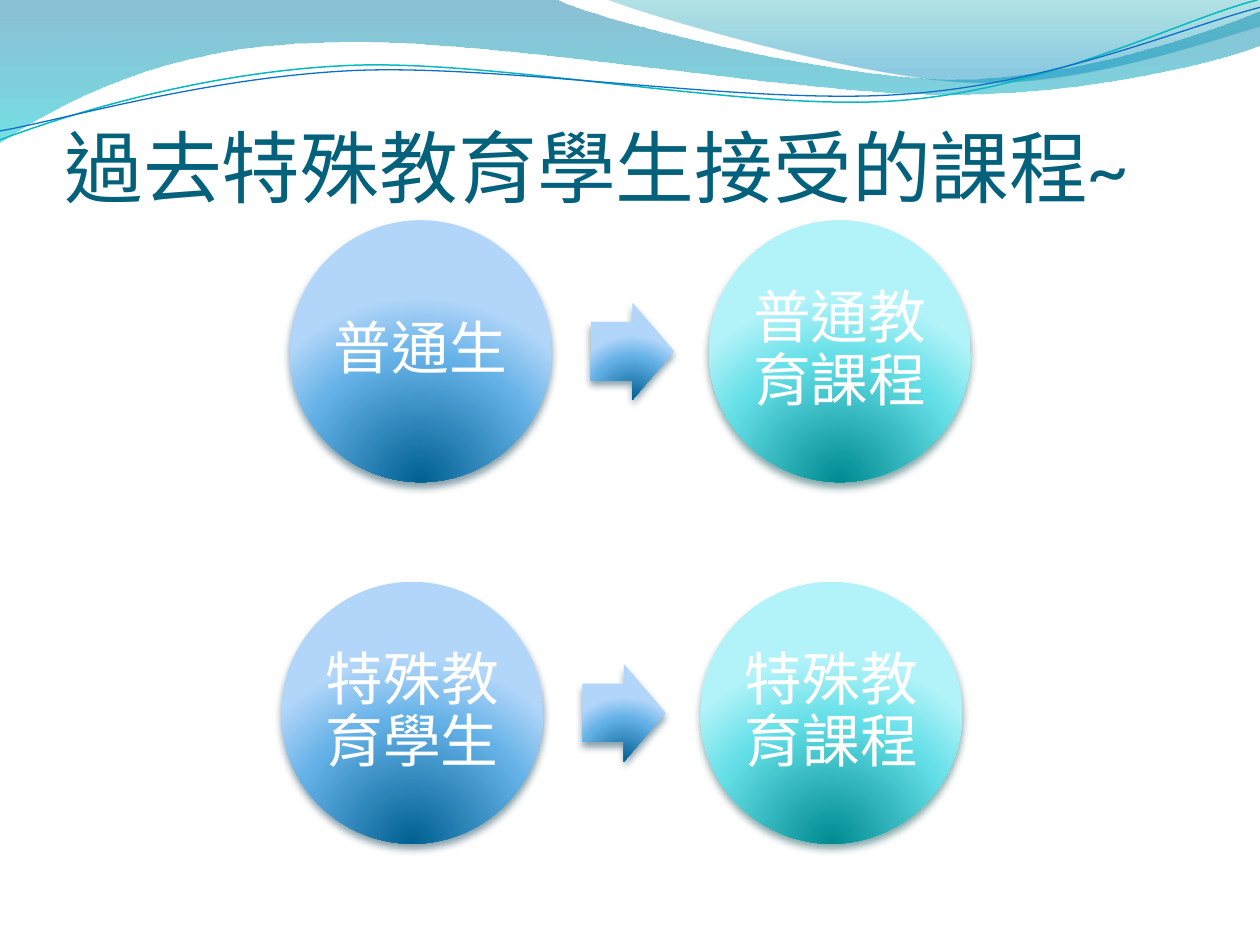
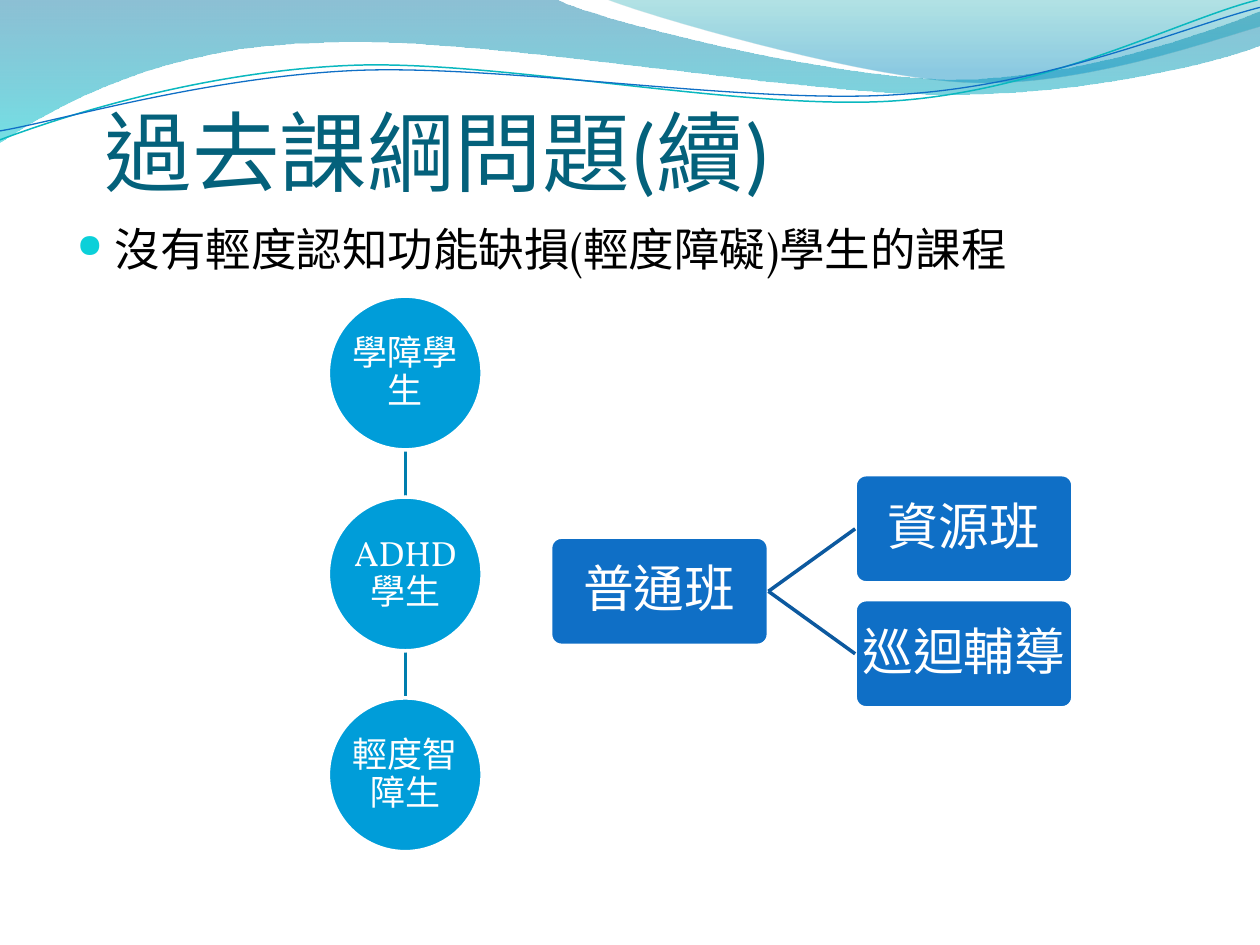
import pptx
import pptx.util
import pptx.dml.color
import pptx.enum.lang
import pptx.enum.shapes
import pptx.enum.text
import pptx.oxml
import pptx.oxml.ns

Cm = pptx.util.Cm
Pt = pptx.util.Pt
RGB = pptx.dml.color.RGBColor
KIND = pptx.enum.shapes.MSO_SHAPE
ALIGN = pptx.enum.text.PP_ALIGN
ANCHOR = pptx.enum.text.MSO_ANCHOR
qn = pptx.oxml.ns.qn

# Colours
WHITE = RGB(0xFF, 0xFF, 0xFF)
BLACK = RGB(0x00, 0x00, 0x00)
TITLE = RGB(0x04, 0x61, 0x7B)
BULLET = RGB(0x0B, 0xD0, 0xD9)
TEAL = RGB(0x0A, 0xB8, 0xBF)
BLUE = RGB(0x0F, 0x6F, 0xC6)
NAVY = RGB(0x0C, 0x59, 0x9F)
SKY = RGB(0x00, 0x9D, 0xD9)
STEEL = RGB(0x00, 0x7E, 0xAE)

# Gradients: (position, colour, opacity), then the shadow of a ball
DEEP = [(0, RGB(0x00, 0x74, 0xA1), 45), (100, RGB(0x00, 0xC6, 0xCF), 55)]
PALE = [(0, RGB(0x00, 0xA1, 0xA9), 30), (80, RGB(0x00, 0x8B, 0xBF), 45)]
COOL = [(0, RGB(0x00, 0x60, 0x91), 100), (68, RGB(0x64, 0xB1, 0xE7), 100),
        (100, RGB(0xB1, 0xD6, 0xF9), 100)]
AQUA = [(0, RGB(0x00, 0x8A, 0x91), 100), (68, RGB(0x64, 0xDF, 0xE7), 100),
        (100, RGB(0xB1, 0xF3, 0xF9), 100)]
COOL_DIM = RGB(0x00, 0x37, 0x4C)
AQUA_DIM = RGB(0x02, 0x4B, 0x4E)

HEAD, BODY = "Calibri", "Vollkorn"
DOWN = '<a:lin ang="5400000" scaled="0"/>'
GLOW = ('<a:path path="circle"><a:fillToRect l="50000" t="130000" '
        'r="50000" b="-30000"/></a:path>')

# Header waves in cm: a pair is a corner, six numbers are a curve
BAND = [(0, 0), (11.23, 0), (12.09, 0.43, 16.87, 1.6, 19.25, 1.6),
        (21.67, 1.6, 24.33, 0.66, 25.4, 0.23), (25.4, 0.91),
        (24.97, 1.12, 22.1, 1.93, 18.95, 1.9),
        (15.8, 1.9, 9.7, 0.71, 6.53, 0.86),
        (3.28, 0.91, 1.17, 2.11, 0, 2.87)]
VEIL = [(12.25, 0), (12.93, 0.28, 17.32, 1.57, 19.53, 1.65),
        (21.74, 1.75, 24.41, 0.81, 25.4, 0.53), (25.4, 0)]
UPPER = [(0, 2.82), (1.22, 2.36, 4.01, 1.45, 7.04, 1.32),
         (10.03, 1.19, 15.06, 2.26, 18.11, 2.03),
         (21.16, 1.8, 23.83, 0.38, 25.35, 0)]
LOWER = [(0, 2.64), (1.19, 2.44, 4.17, 1.55, 7.19, 1.42),
         (10.24, 1.3, 15.16, 2.13, 18.21, 1.9),
         (21.23, 1.7, 23.9, 0.53, 25.4, 0.15)]


def node(tag, inner="", **attrs):
    """Make one drawing element."""
    space = pptx.oxml.ns.nsdecls("a")
    pairs = " ".join(f'{key}="{val}"' for key, val in attrs.items())
    return pptx.oxml.parse_xml(f"<a:{tag} {space} {pairs}>{inner}</a:{tag}>")


def bend(shape, steps):
    """Turn each three lines that stand for a curve into that curve."""
    lines = iter(list(shape.element.iter(qn("a:lnTo"))))
    for step in steps[1:]:
        first = next(lines)
        if len(step) == 6:
            curve = node("cubicBezTo")
            first.addprevious(curve)
            for part in (first, next(lines), next(lines)):
                curve.append(part[0])
                part.getparent().remove(part)


def write(shape, text, size=20, font=BODY, color=WHITE, align=ALIGN.CENTER,
          anchor=ANCHOR.MIDDLE, inset=(0.13,) * 4, space=None):
    """Put one formatted paragraph in a shape and return it."""
    frame = shape.text_frame
    frame.word_wrap = True
    frame.vertical_anchor = anchor
    (frame.margin_left, frame.margin_top,
     frame.margin_right, frame.margin_bottom) = map(Cm, inset)
    para = frame.paragraphs[0]
    para.alignment = align
    para.line_spacing = space
    run = para.add_run()
    run.text = text
    run.font.size, run.font.name = Pt(size), font
    run.font.color.rgb = color
    run.font.language_id = pptx.enum.lang.MSO_LANGUAGE_ID.TRADITIONAL_CHINESE
    return para


class Deck:
    """Holds the shared style and the current slide."""

    def __init__(self):
        self.prs = pptx.Presentation()
        self.prs.slide_width, self.prs.slide_height = Cm(25.4), Cm(19.05)

    def page(self, title, left, top, size):
        self.slide = self.prs.slides.add_slide(self.prs.slide_layouts[6])
        self.shapes = self.slide.shapes
        self.wave(BAND, grad=DEEP)
        self.wave(VEIL, grad=PALE)
        self.wave(UPPER, line=TEAL, width=0.85)
        self.wave(LOWER, line=BLUE, width=0.75)
        box = self.shapes.add_textbox(*map(Cm, (left, top, 22.86, 3.18)))
        write(box, title, size=size, font=HEAD, color=TITLE, align=ALIGN.LEFT,
              anchor=ANCHOR.BOTTOM, inset=(0, 0.13, 0, 0))

    def paint(self, shape, fill=None, grad=None, way=DOWN, line=None, width=2):
        shape.shadow.inherit = False
        if fill is None:
            shape.fill.background()
        else:
            shape.fill.solid()
            shape.fill.fore_color.rgb = fill
        if grad:
            stops = "".join(
                f'<a:gs pos="{pos * 1000}"><a:srgbClr val="{color}">'
                f'<a:alpha val="{alpha * 1000}"/></a:srgbClr></a:gs>'
                for pos, color, alpha in grad)
            props = shape.element.spPr
            props.replace(props.find(qn("a:noFill")),
                          node("gradFill", f"<a:gsLst>{stops}</a:gsLst>{way}",
                               rotWithShape=1))
        if line is None:
            shape.line.fill.background()
        else:
            shape.line.color.rgb = line
            shape.line.width = Pt(width)

    def wave(self, steps, grad=None, line=None, width=1):
        dots = [(Cm(step[i]), Cm(step[i + 1]))
                for step in steps for i in range(0, len(step), 2)]
        pen = self.shapes.build_freeform(*dots[0])
        pen.add_line_segments(dots[1:], close=False)
        item = pen.convert_to_shape()
        bend(item, steps)
        if grad:
            next(item.element.iter(qn("a:path"))).append(node("close"))
        self.paint(item, grad=grad, line=line, width=width)

    def shape(self, kind, left, top, wide, high, **style):
        item = self.shapes.add_shape(kind, *map(Cm, (left, top, wide, high)))
        self.paint(item, **style)
        return item

    def gloss(self, kind, left, top, wide, high, grad, dim):
        item = self.shape(kind, left, top, wide, high, grad=grad, way=GLOW)
        tint = f'<a:srgbClr val="{dim}"><a:alpha val="48000"/></a:srgbClr>'
        item.element.spPr.find(qn("a:effectLst")).append(
            node("outerShdw", tint, blurRad=Pt(4.5), dist=Pt(3),
                 dir=5400000, rotWithShape=0))
        return item

    def line(self, color, start=(0, 0), end=(0, 0), join=None):
        kind = pptx.enum.shapes.MSO_CONNECTOR.STRAIGHT
        link = self.shapes.add_connector(kind, *map(Cm, start + end))
        if join:
            link.begin_connect(join[0], 3)
            link.end_connect(join[1], 1)
        link.line.color.rgb, link.line.width = color, Pt(2)
        link.element.spPr.append(node("effectLst"))

    def point(self, text, left, top, wide, high):
        box = self.shapes.add_textbox(*map(Cm, (left, top, wide, high)))
        para = write(box, text, size=26, color=BLACK, align=ALIGN.LEFT,
                     anchor=ANCHOR.TOP, inset=(0.25, 0.13, 0.25, 0.13))
        para.space_before = Pt(5.2)
        props = para._p.get_or_add_pPr()
        props.set("marL", str(Cm(0.76)))
        props.set("indent", str(-Cm(0.76)))
        props.append(node("buClr", f'<a:srgbClr val="{BULLET}"/>'))
        props.append(node("buSzPct", val=72000))
        props.append(node("buChar", char="●"))

    def pair(self, left, top, first, second):
        """Two glossy balls with an arrow between them."""
        size = 5.28
        balls = [(0, first, COOL, COOL_DIM), (8.45, second, AQUA, AQUA_DIM)]
        for shift, text, grad, dim in balls:
            ball = self.gloss(KIND.OVAL, left + shift, top, size, size,
                              grad, dim)
            write(ball, text, size=33, inset=(0.08, 0.13) * 2, space=0.9)
        arrow = self.gloss(KIND.RIGHT_ARROW, left + 6.07, top + 1.66,
                           1.68, 1.96, COOL, COOL_DIM)
        arrow.adjustments[0], arrow.adjustments[1] = 0.6, 0.5

    def chain(self, left, top, size, step, texts):
        """A column of discs joined by short lines."""
        mid = left + size / 2
        for k in range(len(texts) - 1):
            base = top + k * step
            self.line(STEEL, (mid, base + size), (mid, base + step))
        for k, text in enumerate(texts):
            disc = self.shape(KIND.OVAL, left, top + k * step, size, size,
                              fill=SKY, line=WHITE)
            write(disc, text, size=20, inset=(0.03,) * 4, space=0.9)

    def card(self, left, top, text):
        item = self.shape(KIND.ROUNDED_RECTANGLE, left, top, 4.39, 2.18,
                          fill=BLUE, line=WHITE)
        item.adjustments[0] = 0.1
        write(item, text, size=29, inset=(0.05,) * 4, space=0.9)
        return item


def main():
    deck = Deck()

    # Past courses
    deck.page("過去特殊教育學生接受的課程~", 1.3, 1.12, 45)
    deck.pair(5.84, 4.44, "普通生", "普通教育課程")
    deck.pair(5.67, 11.73, "特殊教育學生", "特殊教育課程")

    # Problems of the past outline
    deck.page("過去課綱問題(續)", 2.11, 0.91, 50)
    deck.point("沒有輕度認知功能缺損(輕度障礙)學生的課程",
               1.3, 4.32, 22.86, 12.57)
    root = deck.card(11.1, 10.83, "普通班")
    for shift, text in [(-1.26, "資源班"), (1.26, "巡迴輔導")]:
        leaf = deck.card(17.24, 10.83 + shift, text)
        deck.line(NAVY, join=(root, leaf))
    deck.chain(6.62, 5.97, 3.1, 4.05, ["學障學生", "ADHD學生", "輕度智障生"])

    deck.prs.save("out.pptx")


if __name__ == "__main__":
    main()
